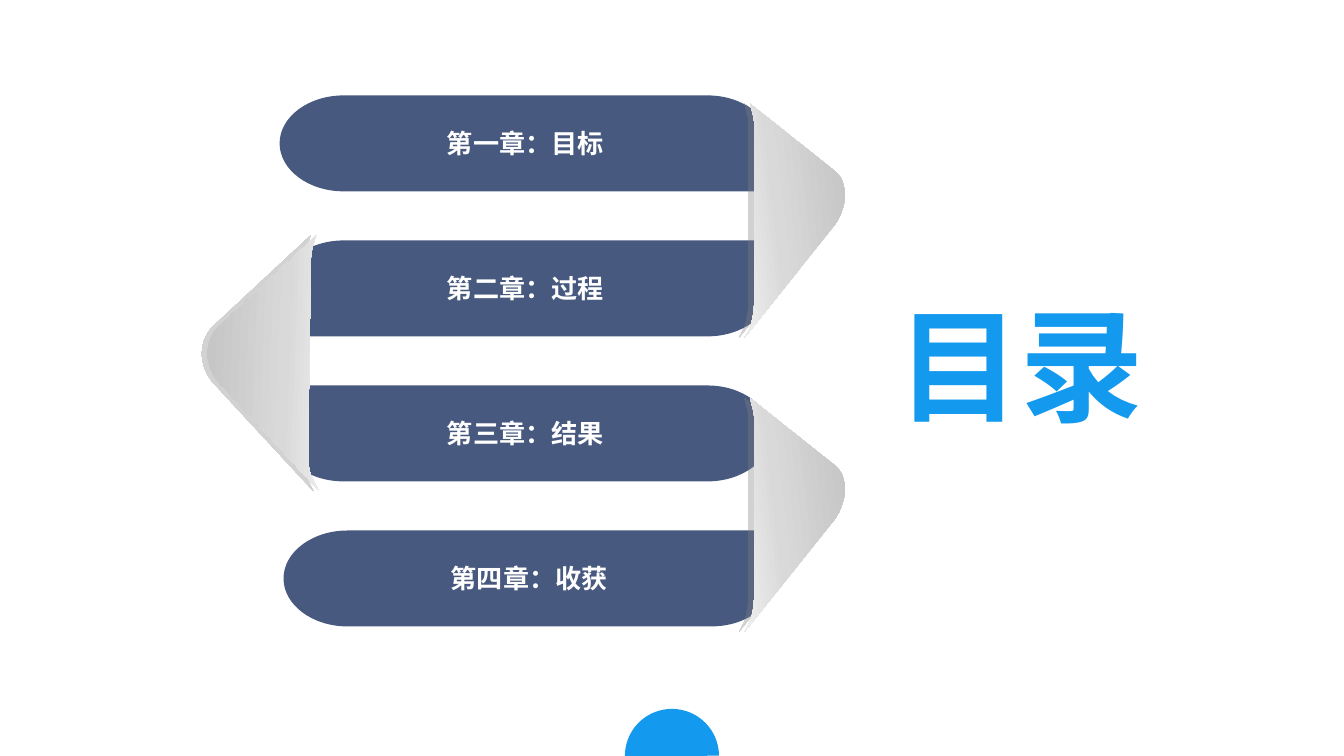
import math

from lxml import etree
from pptx import Presentation
from pptx.dml import color
from pptx.enum import shapes, text
from pptx.oxml import ns
from pptx.util import Pt

COLORS = {
    "accent": "1399EE",
    "bar": "48597F",
    "label": "FFFFFF",
    "shadow": "7F7F7F",
}
FOLD_STOPS = [(0, "BFBFBF"), (41, "F2F2F2"), (62, "D9D9D9"), (100, "BFBFBF")]
FONT = "Noto Sans CJK SC"

BAR_WIDTH, BAR_HEIGHT, BAR_PITCH = 263.5, 51.4, 77.7
BAR_TOP, CORNER_WIDTH, ARC_PULL = 51.1, 34.3, 0.55
BARS = [
    ("第一章：目标", 149.8, "bottom right"),
    ("第二章：过程", 149.8, "bottom left, top right"),
    ("第三章：结果", 149.8, "top left"),
    ("第四章：收获", 151.9, "top right"),
]

RIGHT_FOLD = [
    [(1.1, -62.6)], [(46.4, -26.6)],
    [(53.6, -20.9), (53.6, -7.9), (46.4, 2.2)],
    [(-1.8, 62.6)], [(1.1, 56.9)],
    [(2.5, 52.6), (3.2, 48.2), (3.2, 43.9)],
    [(3.2, -51.1)],
    [(3.2, -53.3), (3.2, -55.4), (2.5, -56.9)],
]
LEFT_FOLD = [
    [(-0.4, -68.8)], [(-51.5, -21.2)],
    [(-60.8, -13.3), (-60.8, 1.1), (-52.2, 10.4)],
    [(1.1, 68)], [(-1.8, 62.3)],
    [(-4, 58.7), (-4.7, 53.6), (-4.7, 49.3)],
    [(-3.2, -55.8)],
    [(-3.2, -58), (-2.5, -60.1), (-2.5, -62.3)],
]


def rgb(name):
    return color.RGBColor.from_string(COLORS[name])


def add_child(parent, tag, **attributes):
    return etree.SubElement(parent, ns.qn(tag), attributes)


def add_run(paragraph, content, size, color_name):
    run = paragraph.add_run()
    run.text = content
    run.font.size = Pt(size)
    run.font.bold = True
    run.font.name = FONT
    run.font.color.rgb = rgb(color_name)
    add_child(run.font._element, "a:ea", typeface=FONT)


def clear_style(shape):
    shape.shadow.inherit = False
    shape.line.fill.background()


def add_outline(slide, segments):
    ends = [(Pt(segment[-1][0]), Pt(segment[-1][1])) for segment in segments]
    builder = slide.shapes.build_freeform(*ends[0], scale=1.0)
    builder.add_line_segments(ends[1:], close=True)
    shape = builder.convert_to_shape()
    lines = list(shape._element.spPr.iter(ns.qn("a:lnTo")))
    for line, segment in zip(lines, segments[1:]):
        if len(segment) == 3:
            curve = etree.Element(ns.qn("a:cubicBezTo"))
            for x, y in segment:
                add_child(curve, "a:pt", x=str(Pt(x) - shape.left), y=str(Pt(y) - shape.top))
            line.getparent().replace(line, curve)
    clear_style(shape)
    return shape


def pull(point, corner):
    return tuple(p + (c - p) * ARC_PULL for p, c in zip(point, corner))


def bar_segments(left, top, square):
    right, bottom = left + BAR_WIDTH, top + BAR_HEIGHT
    middle = top + BAR_HEIGHT / 2
    inner_left, inner_right = left + CORNER_WIDTH, right - CORNER_WIDTH
    corners = [
        ("top left", (left, middle), (left, top), (inner_left, top)),
        ("top right", (inner_right, top), (right, top), (right, middle)),
        ("bottom right", (right, middle), (right, bottom), (inner_right, bottom)),
        ("bottom left", (inner_left, bottom), (left, bottom), (left, middle)),
    ]
    segments = []
    for name, start, corner, end in corners:
        if name in square:
            segments.append([corner])
        else:
            segments.append([start])
            segments.append([pull(start, corner), pull(end, corner), end])
    return segments


def add_bar(slide, label, left, top, square):
    shape = add_outline(slide, bar_segments(left, top, square))
    shape.fill.solid()
    shape.fill.fore_color.rgb = rgb("bar")
    frame = shape.text_frame
    frame.word_wrap = True
    frame.vertical_anchor = text.MSO_ANCHOR.MIDDLE
    paragraph = frame.paragraphs[0]
    paragraph.alignment = text.PP_ALIGN.CENTER
    add_run(paragraph, label, 14, "label")


def set_fold_fill(shape, angle):
    shape.fill.gradient()
    shape.fill.gradient_angle = angle
    stops = shape._element.spPr.find(".//" + ns.qn("a:gsLst"))
    for stop in list(stops):
        stops.remove(stop)
    for position, value in FOLD_STOPS:
        stop = add_child(stops, "a:gs", pos=str(position * 1000))
        add_child(stop, "a:srgbClr", val=value)


def set_fold_shadow(shape):
    effects = shape._element.spPr.find(ns.qn("a:effectLst"))
    shadow = add_child(effects, "a:outerShdw", blurRad="0", dist=str(Pt(3)),
                       dir="10800000", algn="r", rotWithShape="0")
    tint = add_child(shadow, "a:srgbClr", val=COLORS["shadow"])
    add_child(tint, "a:alpha", val="35000")


def add_fold(slide, segments, center_x, center_y, rotation, gradient_angle):
    cosine = math.cos(math.radians(rotation))
    sine = math.sin(math.radians(rotation))
    upright = [
        [(center_x + x * cosine + y * sine, center_y - x * sine + y * cosine)
         for x, y in segment]
        for segment in segments
    ]
    shape = add_outline(slide, upright)
    shape.rotation = rotation
    set_fold_fill(shape, gradient_angle)
    set_fold_shadow(shape)


def add_half_disc(slide):
    shape = slide.shapes.add_shape(
        shapes.MSO_SHAPE.PIE, Pt(334.8), Pt(379.8), Pt(50.4), Pt(50.4))
    shape.adjustments[0] = 108
    shape.adjustments[1] = 215.82
    clear_style(shape)
    shape.fill.solid()
    shape.fill.fore_color.rgb = rgb("accent")


def add_title(slide, content):
    title = slide.shapes.title
    title.left, title.top = Pt(473.4), Pt(151.2)
    title.width, title.height = Pt(147.6), Pt(87.1)
    frame = title.text_frame
    frame.word_wrap = False
    frame.auto_size = text.MSO_AUTO_SIZE.SHAPE_TO_FIT_TEXT
    frame.vertical_anchor = text.MSO_ANCHOR.TOP
    paragraph = frame.paragraphs[0]
    paragraph.alignment = text.PP_ALIGN.LEFT
    add_run(paragraph, content, 66, "accent")


def main():
    presentation = Presentation()
    presentation.slide_width, presentation.slide_height = Pt(720), Pt(405)
    slide = presentation.slides.add_slide(presentation.slide_layouts[5])
    add_half_disc(slide)
    for row, (label, left, square) in enumerate(BARS):
        add_bar(slide, label, left, BAR_TOP + row * BAR_PITCH, square)
    for center_y in (118.1, 275.8):
        add_fold(slide, RIGHT_FOLD, 400.7, center_y, 38.4, 45)
    add_fold(slide, LEFT_FOLD, 169.6, 194.8, 317.5, 135)
    add_title(slide, "目录")
    presentation.save("out.pptx")


if __name__ == "__main__":
    main()
